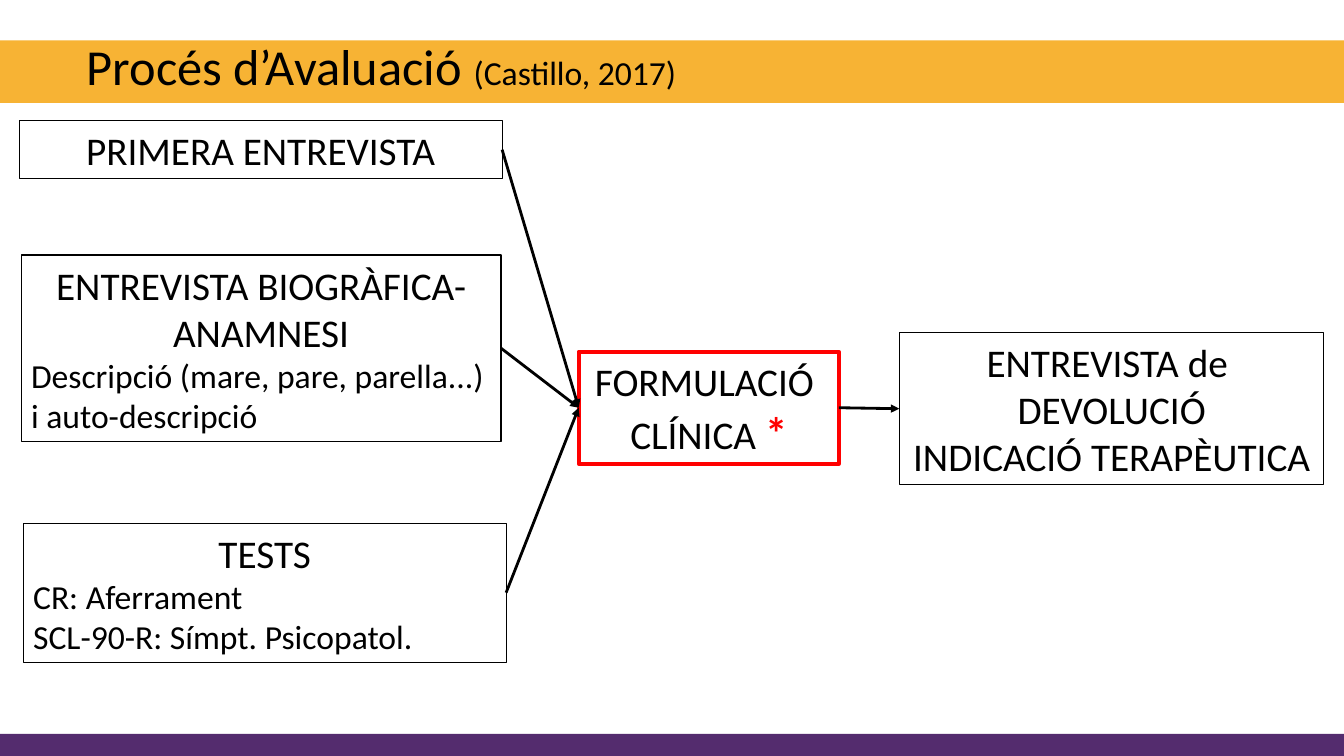
from pptx import Presentation
from pptx.dml.color import RGBColor
from pptx.enum.shapes import MSO_CONNECTOR, MSO_SHAPE
from pptx.enum.text import MSO_ANCHOR, MSO_AUTO_SIZE, PP_ALIGN
from pptx.oxml.ns import qn
from pptx.util import Inches, Pt
from lxml import etree

RECT = MSO_SHAPE.RECTANGLE
STRAIGHT = MSO_CONNECTOR.STRAIGHT
MIDDLE = MSO_ANCHOR.MIDDLE
NO_FIT = MSO_AUTO_SIZE.NONE
GROW = MSO_AUTO_SIZE.SHAPE_TO_FIT_TEXT
LEFT, CENTER = PP_ALIGN.LEFT, PP_ALIGN.CENTER
LEFT_SITE, RIGHT_SITE = 1, 3

BLACK = RGBColor(0, 0, 0)
WHITE = RGBColor(0xFF, 0xFF, 0xFF)
RED = RGBColor(0xFF, 0, 0)
AMBER = RGBColor(0xF7, 0xB3, 0x34)
PURPLE = RGBColor(0x54, 0x2C, 0x6E)


def add_text(para, text, size=28, color=BLACK, bold=False):
    run = para.add_run()
    run.text = text
    font = run.font
    font.name = "Calibri"
    font.size = Pt(size)
    font.color.rgb = color
    font.bold = bold


def add_rect(slide, place, fill=None, line=None, width=0.75):
    rect = slide.shapes.add_shape(RECT, *map(Inches, place))
    rect.shadow.inherit = False
    if fill is None:
        rect.fill.background()
    else:
        rect.fill.solid()
        rect.fill.fore_color.rgb = fill
    if line is None:
        rect.line.fill.background()
    else:
        rect.line.color.rgb = line
        rect.line.width = Pt(width)
    return rect


def add_box(slide, place, heads, notes=(), line=BLACK, **style):
    box = add_rect(slide, place, line=line, **style)
    frame = box.text_frame
    frame.word_wrap = True
    frame.auto_size = GROW
    rows = [(head, 28, CENTER) for head in heads]
    rows += [(note, 24, LEFT) for note in notes]
    for index, (text, size, align) in enumerate(rows):
        para = frame.add_paragraph() if index else frame.paragraphs[0]
        para.alignment = align
        add_text(para, text, size=size)
    return box


def add_arrow(slide, start, end):
    arrow = slide.shapes.add_connector(STRAIGHT, 0, 0, 0, 0)
    arrow.begin_connect(start, RIGHT_SITE)
    arrow.end_connect(end, LEFT_SITE)
    arrow.line.color.rgb = BLACK
    arrow.line.width = Pt(2)
    etree.SubElement(arrow.line._get_or_add_ln(), qn("a:tailEnd"), type="triangle")
    etree.SubElement(arrow._element.spPr, qn("a:effectLst"))


def set_title(slide):
    title = slide.shapes.title
    title.left, title.top = Inches(0.76), Inches(0.29)
    title.width, title.height = Inches(7.69), Inches(0.79)
    frame = title.text_frame
    frame.word_wrap = True
    frame.auto_size = NO_FIT
    frame.vertical_anchor = MIDDLE
    para = frame.paragraphs[0]
    para.alignment = LEFT
    para.line_spacing = 0.9
    add_text(para, "Procés d’Avaluació ", size=36)
    add_text(para, "(Castillo, 2017)", size=24)


def main():
    deck = Presentation()
    deck.slide_width, deck.slide_height = Inches(13.33), Inches(7.5)
    slide = deck.slides.add_slide(deck.slide_layouts[5])

    bands = [
        add_rect(slide, (-0.04, 0.4, 13.42, 0.62), fill=AMBER),
        add_rect(slide, (0, 7.28, 13.42, 0.23), fill=PURPLE),
    ]
    for band in bands:
        slide.shapes.title._element.addprevious(band._element)
    set_title(slide)

    inputs = [
        add_box(slide, (0.19, 1.2, 4.79, 0.57), ["PRIMERA ENTREVISTA"]),
        add_box(slide, (0.21, 2.53, 4.76, 1.85),
                ["ENTREVISTA BIOGRÀFICA-ANAMNESI"],
                ["Descripció (mare, pare, parella...) i auto-descripció"]),
        add_box(slide, (0.23, 5.19, 4.79, 1.38), ["TESTS"],
                ["CR: Aferrament", "SCL-90-R: Símpt. Psicopatol."]),
    ]
    center = add_box(slide, (5.74, 3.49, 2.58, 1.11),
                     ["FORMULACIÓ ", "CLÍNICA "],
                     fill=WHITE, line=RED, width=3)
    add_text(center.text_frame.paragraphs[1], "*", size=32, color=RED, bold=True)
    result = add_box(slide, (8.92, 3.3, 4.21, 1.51),
                     ["ENTREVISTA de ", "DEVOLUCIÓ", "INDICACIÓ TERAPÈUTICA"])

    for box in inputs:
        add_arrow(slide, box, center)
    add_arrow(slide, center, result)
    deck.save("out.pptx")


if __name__ == "__main__":
    main()
